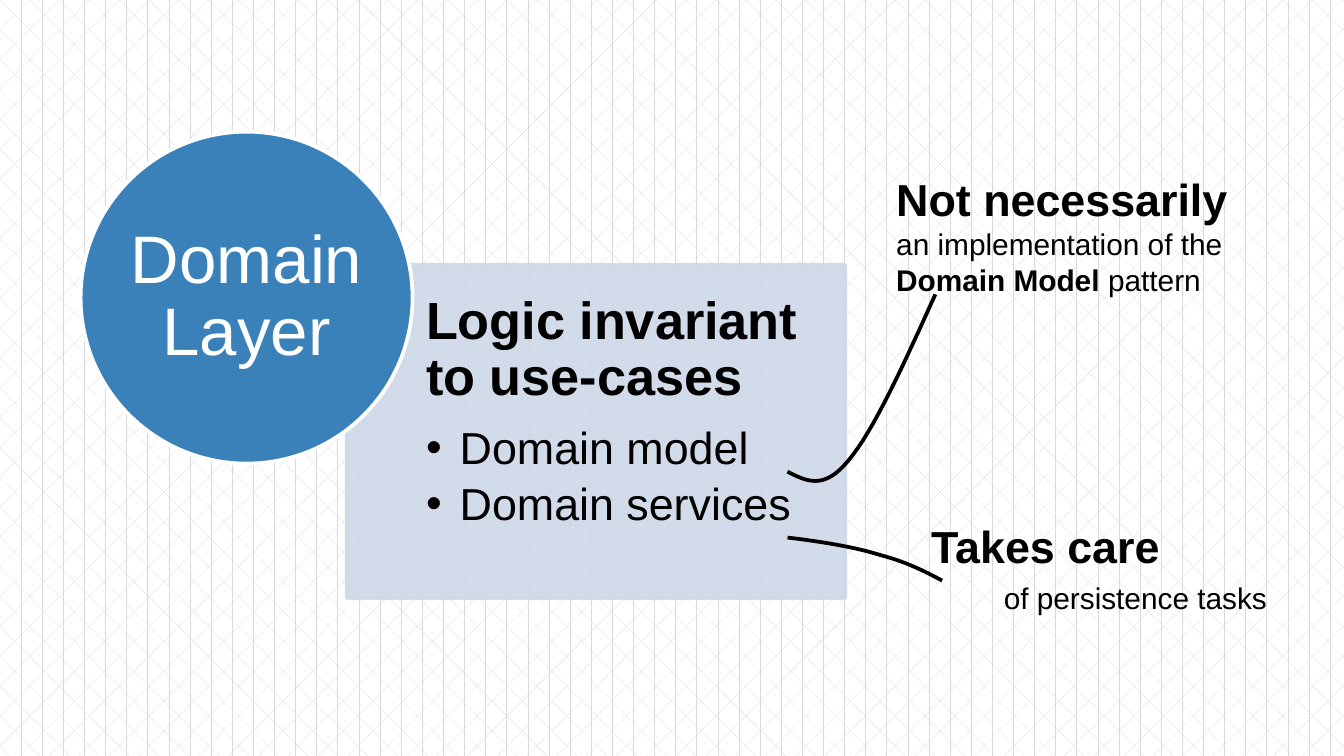
"""Build the Domain Layer slide with its two side notes."""
from lxml import etree
from pptx import Presentation
from pptx.dml.color import RGBColor
from pptx.enum.dml import MSO_PATTERN
from pptx.enum.shapes import MSO_SHAPE
from pptx.enum.text import MSO_ANCHOR, MSO_AUTO_SIZE, PP_ALIGN
from pptx.oxml.ns import qn
from pptx.util import Inches, Pt

BLACK = RGBColor(0x00, 0x00, 0x00)
WHITE = RGBColor(0xFF, 0xFF, 0xFF)
GRAY = RGBColor(0xD9, 0xD9, 0xD9)
PALE = RGBColor(0xCE, 0xD8, 0xE7)
BLUE = RGBColor(0x3A, 0x81, 0xBA)


def add_text(box, paragraphs, color=BLACK, insets=(0.1, 0.05, 0.1, 0.05)):
    tf = s.shapes.add_textbox(*[Inches(v) for v in box]).text_frame
    tf.word_wrap = True
    tf.margin_left, tf.margin_top, tf.margin_right, tf.margin_bottom = [Inches(v) for v in insets]
    for i, runs in enumerate(paragraphs):
        p = tf.add_paragraph() if i else tf.paragraphs[0]
        for text, size, bold in runs:
            r = p.add_run()
            r.text = text
            r.font.name = "Arial"
            r.font.size = Pt(size)
            r.font.bold = bold
            r.font.color.rgb = color
    return tf


def set_indent(p, left, first=0):
    pPr = p._p.get_or_add_pPr()
    pPr.set("marL", str(Inches(left)))
    pPr.set("indent", str(Inches(first)))
    return pPr


prs = Presentation()
prs.slide_width = Inches(10)
prs.slide_height = Inches(10 * 9 / 16)
s = prs.slides.add_slide(prs.slide_layouts[6])

fill = s.background.fill
fill.patterned()
fill.pattern = MSO_PATTERN.DIVOT
fill.fore_color.rgb = GRAY
fill.back_color.rgb = WHITE

panel = s.shapes.add_shape(MSO_SHAPE.RECTANGLE, Inches(2.58), Inches(1.97), Inches(3.71), Inches(2.48))
panel.fill.solid()
panel.fill.fore_color.rgb = PALE
panel.line.color.rgb = PALE
panel.line.width = Pt(2)
panel.shadow.inherit = False
for clr in panel._element.spPr.iter(qn("a:srgbClr")):
    etree.SubElement(clr, qn("a:alpha")).set("val", "90000")

tf = add_text(
    (3.17, 1.97, 3.12, 2.48),
    [
        [("Logic invariant to use-cases", 28, True)],
        [("Domain model", 24, False)],
        [("Domain services", 24, False)],
    ],
    insets=(0, 0.22, 0.22, 0.22),
)
for p in tf.paragraphs:
    p.line_spacing = 0.9
    p.space_after = Pt(4)
tf.paragraphs[0].space_after = Pt(10)
for p in tf.paragraphs[1:]:
    p.level = 1
    pPr = set_indent(p, 0.25, -0.25)
    etree.SubElement(pPr, qn("a:buFont")).set("typeface", "Arial")
    etree.SubElement(pPr, qn("a:buChar")).set("char", "•")

circle = s.shapes.add_shape(MSO_SHAPE.OVAL, Inches(0.6), Inches(0.98), Inches(2.47), Inches(2.47))
circle.fill.solid()
circle.fill.fore_color.rgb = BLUE
circle.line.color.rgb = WHITE
circle.line.width = Pt(2)
circle.shadow.inherit = False

tf = add_text((0.96, 1.34, 1.75, 1.75), [[("Domain Layer", 36, False)]], WHITE, (0, 0, 0, 0))
tf.vertical_anchor = MSO_ANCHOR.MIDDLE
tf.paragraphs[0].alignment = PP_ALIGN.CENTER
tf.paragraphs[0].line_spacing = 0.9

tf = add_text(
    (6.57, 1.23, 2.92, 1.04),
    [
        [("Not necessarily", 24, True)],
        [("an implementation of the ", 16, False), ("Domain Model ", 16, True), ("pattern", 16, False)],
    ],
)
tf.auto_size = MSO_AUTO_SIZE.SHAPE_TO_FIT_TEXT
tf.paragraphs[1].level = 1
set_indent(tf.paragraphs[1], 0)

curves = [
    [(5.86, 3.51), (6, 3.58), (6.13, 3.65), (6.31, 3.43), (6.5, 3.21), (6.73, 2.7), (6.96, 2.19)],
    [(5.86, 4), (6.11, 4.03), (6.36, 4.07), (6.55, 4.13), (6.74, 4.18), (6.88, 4.25), (7.01, 4.32)],
]
steps = 16
for curve in curves:
    points = []
    for start in (0, 3):
        a, b, c, d = curve[start:start + 4]
        for k in range(1, steps + 1):
            t = k / steps
            u = 1 - t
            points.append([
                Inches(u**3 * a[i] + 3 * u**2 * t * b[i] + 3 * u * t**2 * c[i] + t**3 * d[i])
                for i in (0, 1)
            ])
    builder = s.shapes.build_freeform(Inches(curve[0][0]), Inches(curve[0][1]))
    builder.add_line_segments(points, close=False)
    sp = builder.convert_to_shape()
    sp.fill.background()
    sp.line.color.rgb = BLACK
    sp.line.width = Pt(2)
    sp.shadow.inherit = False

tf = add_text(
    (6.83, 3.81, 2.92, 0.84),
    [[("Takes care", 24, True)], [("of persistence tasks", 16, False)]],
)
tf.auto_size = MSO_AUTO_SIZE.SHAPE_TO_FIT_TEXT
set_indent(tf.paragraphs[1], 0.54)
tf.paragraphs[1].space_before = Pt(4)

prs.save("out.pptx")
